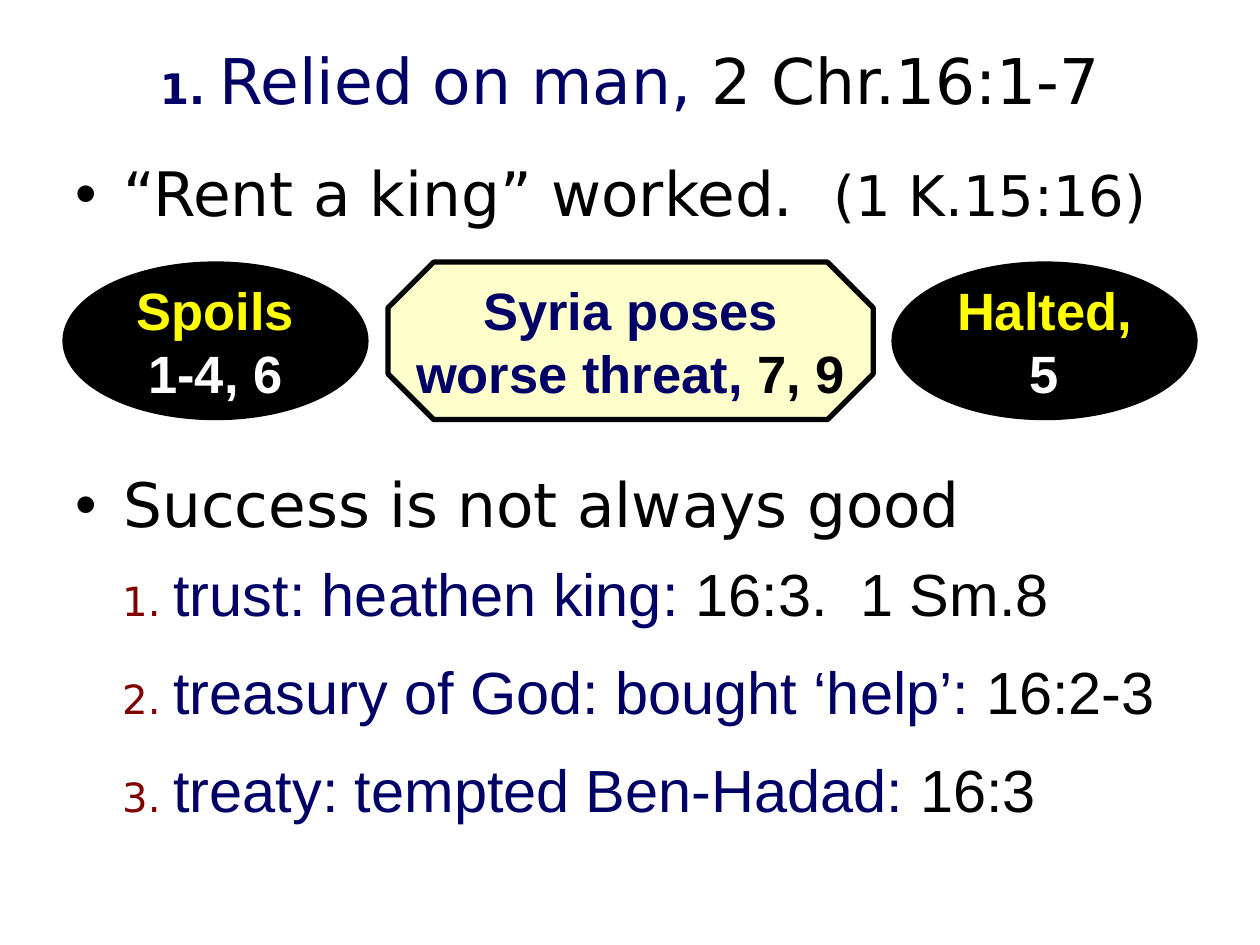
"""Build the slide on relying on man, 2 Chronicles 16."""
from lxml.etree import SubElement
from pptx import Presentation
from pptx.dml.color import RGBColor as RGB
from pptx.enum.shapes import MSO_SHAPE as SHAPE
from pptx.enum.text import MSO_ANCHOR as ANCHOR, MSO_AUTO_SIZE as FIT, PP_ALIGN as ALIGN
from pptx.oxml.ns import qn
from pptx.util import Inches, Pt

HUES = {"black": "000000", "white": "FFFFFF", "navy": "000066",
        "red": "800000", "yellow": "FFFF00", "cream": "FFFFCC"}
SANS, ARIAL = "DejaVu Sans", "Arial"


def hue(name):
    return RGB.from_string(HUES[name])


def write(para, text, color, size=None, face=None):
    run = para.add_run()
    run.text = text
    run.font.color.rgb = hue(color)
    if size:
        run.font.size = Pt(size)
    if face:
        run.font.name = face
    return run


deck = Presentation()
deck.slide_width, deck.slide_height = Inches(10), Inches(7.5)
slide = deck.slides.add_slide(deck.slide_layouts[1])

title = slide.shapes.title
title.left, title.top = Inches(0.5), Inches(0.25)
title.width, title.height = Inches(9), Inches(0.83)
frame = title.text_frame
frame.auto_size = FIT.NONE
frame.vertical_anchor = ANCHOR.MIDDLE
para = frame.paragraphs[0]
para.alignment, para.line_spacing = ALIGN.CENTER, 0.9
para.font.name = SANS
write(para, "1. ", "navy", 24, SANS).font.bold = True
write(para, "Relied on man,", "navy", 36, SANS)
write(para, " 2 Chr.16:1-7", "black", 36, SANS)

body = slide.placeholders[1]
body.left, body.top = Inches(0.5), Inches(1.25)
body.width, body.height = Inches(9), Inches(5.42)
frame = body.text_frame
frame.auto_size = FIT.NONE
lines = [
    (True, 0, 0, [("“Rent a king” worked.  ", "black", 35, SANS),
                  ("(1 K.15:16)", "black", 32, SANS)]),
    (True, 140, 6, [("Success is not always good", "black", 35, SANS)]),
]
points = [("trust: heathen king:", " 16:3.  1 Sm.8"),
          ("treasury of God: bought ‘help’: ", "16:2-3"),
          ("treaty: tempted Ben-Hadad: ", "16:3")]
for num, (point, verse) in enumerate(points, 1):
    lines.append((False, 7.5, 12, [(f"{num}. ", "red", 23, SANS),
                                   (point, "navy", 34, ARIAL),
                                   (verse, "black", 34, ARIAL)]))
for num, (dot, before, after, runs) in enumerate(lines):
    para = frame.add_paragraph() if num else frame.paragraphs[0]
    para.line_spacing = 0.9
    para.space_before, para.space_after = Pt(before), Pt(after)
    props = para._p.get_or_add_pPr()
    props.set("marL", str(Inches(0.38 if dot else 0.37)))
    props.set("indent", str(Inches(-0.38 if dot else 0)))
    if dot:
        SubElement(props, qn("a:buChar"), char="•")
    else:
        SubElement(props, qn("a:buNone"))
    for run in runs:
        write(para, *run)

boxes = [
    (SHAPE.OVAL, 0.5, 2.42, "black", 0.75,
     [[("Spoils", "yellow")], [("1-4, 6", "white")]]),
    (SHAPE.OVAL, 7.08, 2.42, "black", 0.75,
     [[("Halted,", "yellow")], [("5", "white")]]),
    (SHAPE.OCTAGON, 3.08, 3.85, "cream", 3,
     [[("Syria poses", "navy")], [("worse threat, ", "navy"), ("7, 9", "black")]]),
]
for kind, left, width, fill, weight, rows in boxes:
    box = slide.shapes.add_shape(kind, Inches(left), Inches(2.08), Inches(width), Inches(1.25))
    box.shadow.inherit = False
    box.fill.solid()
    box.fill.fore_color.rgb = hue(fill)
    box.line.color.rgb = hue("black")
    box.line.width = Pt(weight)
    if kind == SHAPE.OCTAGON:
        box.adjustments[0] = 0.29
    frame = box.text_frame
    frame.word_wrap = False
    frame.vertical_anchor = ANCHOR.MIDDLE
    para = frame.paragraphs[0]
    para.alignment = ALIGN.CENTER
    para.font.name, para.font.size, para.font.bold = ARIAL, Pt(30), True
    for num, row in enumerate(rows):
        if num:
            para.add_line_break()
        for text, color in row:
            write(para, text, color)

deck.save("out.pptx")
